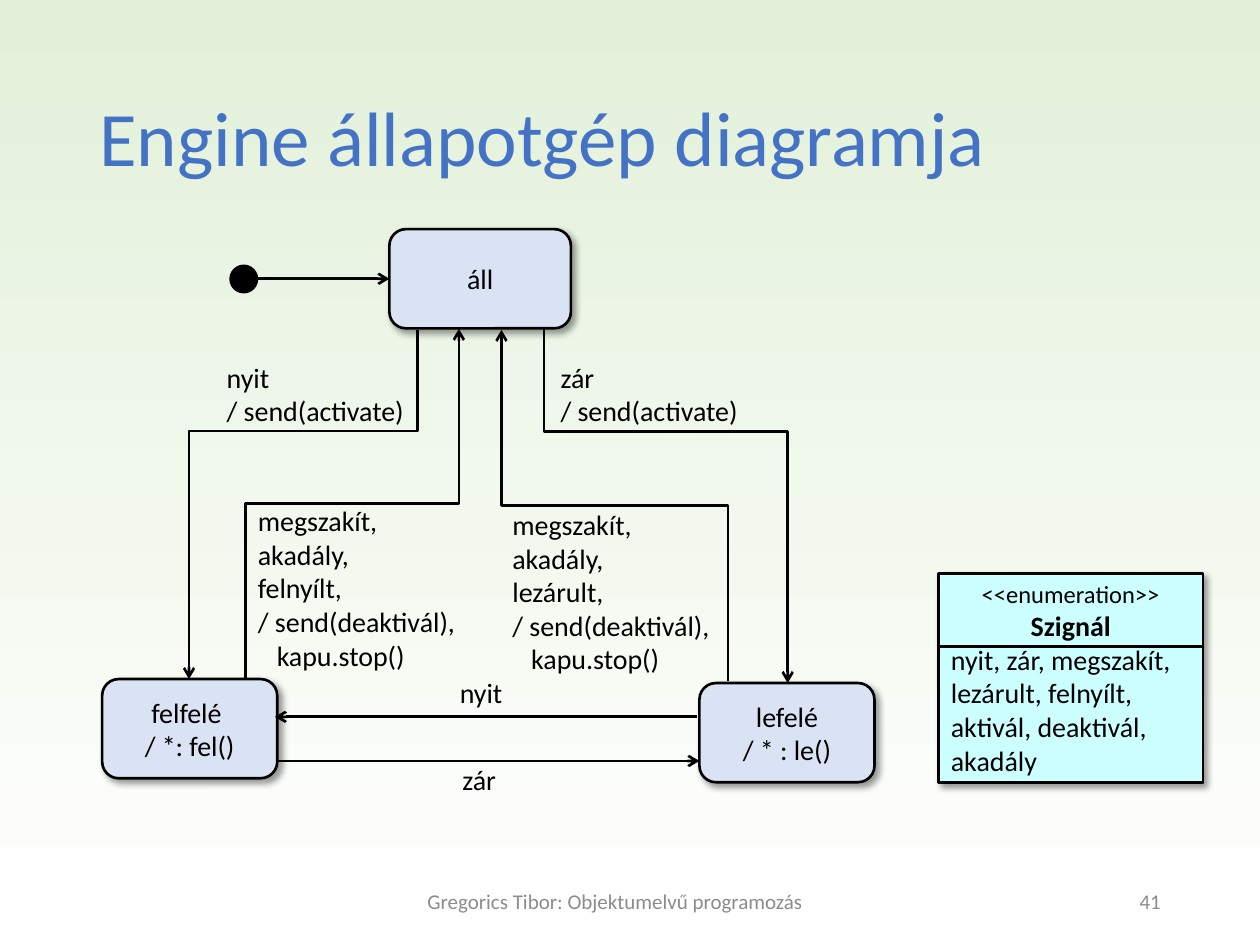
from lxml.etree import SubElement
from pptx import Presentation
from pptx.dml.color import RGBColor
from pptx.enum.shapes import MSO_CONNECTOR, MSO_SHAPE
from pptx.enum.text import MSO_ANCHOR, MSO_AUTO_SIZE, PP_ALIGN
from pptx.oxml.ns import qn
from pptx.util import Cm, Pt

BLACK = RGBColor(0x00, 0x00, 0x00)
WHITE = RGBColor(0xFF, 0xFF, 0xFF)
PALE_GREEN = RGBColor(0xE2, 0xF0, 0xD9)
PALE_BLUE = RGBColor(0xDA, 0xE3, 0xF3)
CYAN = RGBColor(0xCC, 0xFF, 0xFF)
TITLE_BLUE = RGBColor(0x44, 0x72, 0xC4)
GREY = RGBColor(0x8C, 0x8C, 0x8C)


def write(frame, text, size=16, color=BLACK, bold=False,
          align=PP_ALIGN.LEFT, spacing=None, indent=0):
    """Append the lines of text to a frame, one paragraph each."""
    for line in text.split("\n"):
        paragraph = frame.paragraphs[-1]
        if paragraph.runs:
            paragraph = frame.add_paragraph()
        paragraph.alignment = align
        paragraph.line_spacing = spacing
        if indent:
            paragraph._p.get_or_add_pPr().set("marL", str(Cm(indent)))
        run = paragraph.add_run()
        run.text = line
        run.font.name = "Calibri"
        run.font.size = Pt(size)
        run.font.bold = bold
        run.font.color.rgb = color


class StateDiagram:
    line_width = Pt(1.5)
    state_height = 2

    def __init__(self, slide):
        self.slide = slide

    def background(self, bottom, top):
        fill = self.slide.background.fill
        fill.gradient()
        fill.gradient_angle = 90
        for stop, position, color in zip(fill.gradient_stops, (0, 1), (bottom, top)):
            stop.position = position
            stop.color.rgb = color

    def box(self, kind, left, top, width, height, fill=None, shadow=False):
        shape = self.slide.shapes.add_shape(
            kind, Cm(left), Cm(top), Cm(width), Cm(height))
        if fill is None:
            shape.fill.background()
        else:
            shape.fill.solid()
            shape.fill.fore_color.rgb = fill
        shape.line.color.rgb = BLACK
        shape.line.width = self.line_width
        shape.shadow.inherit = False
        if shadow:
            effects = shape._element.spPr.find(qn("a:effectLst"))
            outer = SubElement(effects, qn("a:outerShdw"), blurRad=str(Pt(4)),
                               dist=str(Pt(3)), dir="2700000", algn="tl",
                               rotWithShape="0")
            shade = SubElement(outer, qn("a:srgbClr"), val=str(BLACK))
            SubElement(shade, qn("a:alpha"), val="40000")
        shape.text_frame.word_wrap = True
        shape.text_frame.vertical_anchor = MSO_ANCHOR.MIDDLE
        return shape.text_frame

    def state(self, text, left, top, width=3.53):
        frame = self.box(MSO_SHAPE.ROUNDED_RECTANGLE, left, top, width,
                         self.state_height, PALE_BLUE, shadow=True)
        write(frame, text, align=PP_ALIGN.CENTER)

    def text_area(self, text, left, top, width, height, **style):
        area = self.slide.shapes.add_textbox(
            Cm(left), Cm(top), Cm(width), Cm(height))
        area.text_frame.word_wrap = True
        area.text_frame.vertical_anchor = MSO_ANCHOR.MIDDLE
        write(area.text_frame, text, **style)
        return area.text_frame

    def label(self, text, left, top, width, height):
        frame = self.text_area(text, left, top, width, height)
        frame.word_wrap = False
        frame.auto_size = MSO_AUTO_SIZE.SHAPE_TO_FIT_TEXT
        frame.vertical_anchor = MSO_ANCHOR.TOP
        return frame

    def arrow(self, x1, y1, x2, y2, kind=MSO_CONNECTOR.STRAIGHT, end="tailEnd"):
        connector = self.slide.shapes.add_connector(
            kind, Cm(x1), Cm(y1), Cm(x2), Cm(y2))
        connector.line.color.rgb = BLACK
        connector.line.width = self.line_width
        SubElement(connector.line._get_or_add_ln(), qn("a:" + end), type="arrow")
        SubElement(connector._element.spPr, qn("a:effectLst"))
        return connector

    def elbow(self, x1, y1, x2, y2, bend=0.5, end="tailEnd"):
        """A bent arrow that leaves downwards: a quarter-turned elbow."""
        middle_x, middle_y = (x1 + x2) / 2, (y1 + y2) / 2
        half_width, half_height = (y2 - y1) / 2, abs(x2 - x1) / 2
        to_right = x2 > x1
        if to_right:
            half_width = -half_width
        connector = self.arrow(middle_x - half_width, middle_y - half_height,
                               middle_x + half_width, middle_y + half_height,
                               MSO_CONNECTOR.ELBOW, end)
        properties = connector._element.spPr
        turn = 270 if to_right else 90
        properties.find(qn("a:xfrm")).set("rot", str(turn * 60000))
        adjustments = properties.find(qn("a:prstGeom")).find(qn("a:avLst"))
        SubElement(adjustments, qn("a:gd"), name="adj1",
                   fmla=f"val {round(bend * 100000)}")


def main():
    presentation = Presentation()
    presentation.slide_width, presentation.slide_height = Cm(25.4), Cm(19.05)
    slide = presentation.slides.add_slide(presentation.slide_layouts[6])
    diagram = StateDiagram(slide)
    diagram.background(WHITE, PALE_GREEN)

    # Title
    diagram.text_area("Engine állapotgép diagramja", 1.75, 1.02, 21.89, 3.68,
                      size=44, color=TITLE_BLUE, spacing=0.9)

    # States and the starting point
    diagram.state("áll", 7.85, 4.62, width=3.66)
    diagram.state("felfelé \n/ *: fel()", 2.06, 13.69)
    diagram.state("lefelé\n/ * : le()", 14.1, 13.77)
    diagram.box(MSO_SHAPE.OVAL, 4.65, 5.36, 0.53, 0.53, BLACK)

    # Transitions
    diagram.arrow(5.18, 5.62, 7.85, 5.62)
    diagram.arrow(5.59, 15.34, 14.1, 15.34)
    diagram.arrow(14.05, 14.45, 5.54, 14.45)
    diagram.elbow(8.41, 6.65, 3.81, 13.69, bend=0.29)
    diagram.elbow(10.97, 6.63, 15.88, 13.77, bend=0.29)
    diagram.elbow(9.25, 6.63, 4.95, 13.67, end="headEnd")
    diagram.elbow(10.11, 6.65, 14.68, 13.72, end="headEnd")

    # Transition labels
    for signal, left in (("nyit", 4.32), ("zár", 11.05)):
        diagram.label(f"{signal}\n/ send(activate)", left, 7.14, 4.14, 1.63)
    for signal, left, top in (("felnyílt", 4.95, 10.03), ("lezárult", 10.08, 10.11)):
        stopping = diagram.label(
            f"megszakít,\nakadály,\n{signal},\n/ send(deaktivál),",
            left, top, 4.55, 3.68)
        write(stopping, "kapu.stop()", indent=0.38)
    diagram.label("nyit", 9.02, 13.49, 1.37, 0.94)
    diagram.label("zár", 9.07, 15.24, 1.32, 0.94)

    # Enumeration of signals
    signals = diagram.box(MSO_SHAPE.RECTANGLE, 18.92, 11.56, 5.33, 4.22,
                          CYAN, shadow=True)
    write(signals, "<<enumeration>>", size=14, align=PP_ALIGN.CENTER)
    write(signals, "Szignál", bold=True, align=PP_ALIGN.CENTER)
    write(signals, "nyit, zár, megszakít,\nlezárult, felnyílt,\n"
                   "aktivál, deaktivál,\nakadály")
    diagram.box(MSO_SHAPE.RECTANGLE, 18.92, 13.03, 5.33, 2.75)

    # Footer
    diagram.text_area("Gregorics Tibor: Objektumelvű programozás",
                      6.76, 17.65, 11.28, 1.02,
                      size=12, color=GREY, align=PP_ALIGN.CENTER)
    diagram.text_area("41", 17.93, 17.65, 5.72, 1.02,
                      size=12, color=GREY, align=PP_ALIGN.RIGHT)

    presentation.save("out.pptx")


if __name__ == "__main__":
    main()
